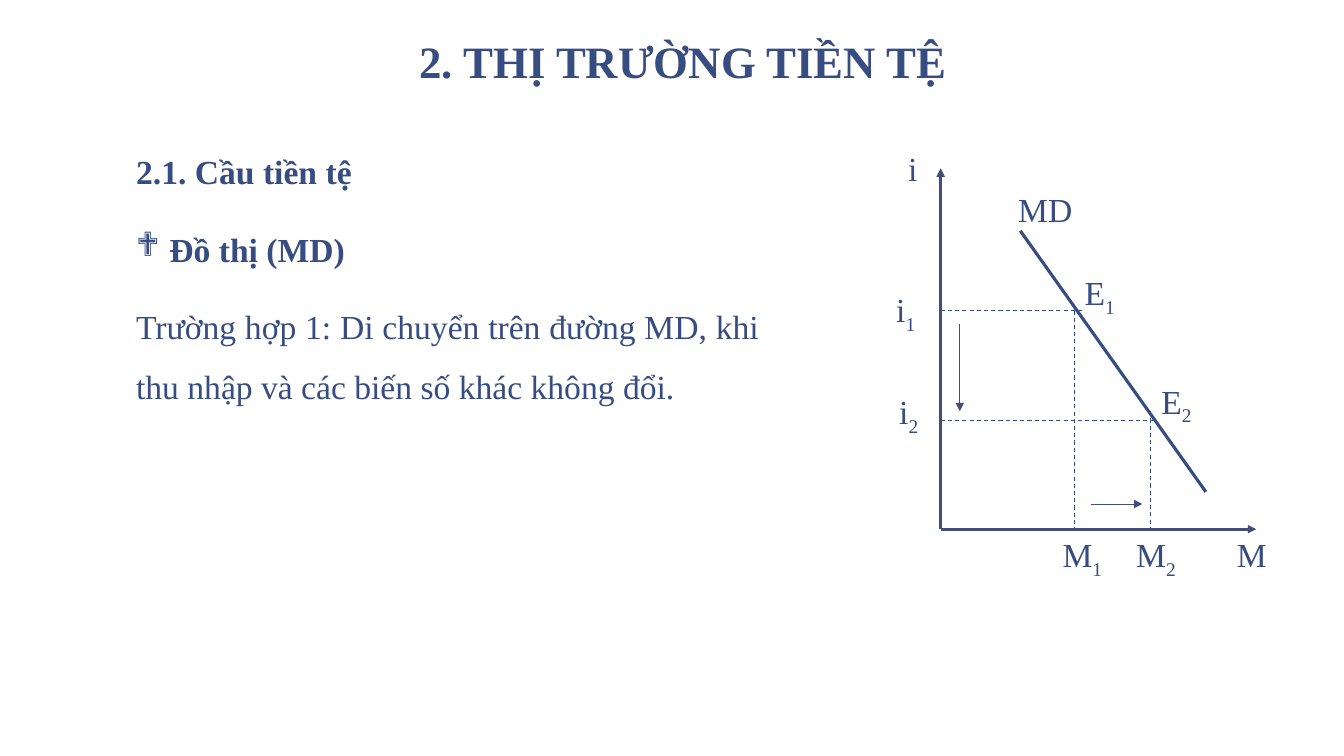
from collections import namedtuple

from lxml.etree import SubElement
from pptx import Presentation
from pptx.dml.color import RGBColor
from pptx.enum.dml import MSO_LINE
from pptx.enum.shapes import MSO_CONNECTOR
from pptx.enum.text import MSO_ANCHOR, MSO_AUTO_SIZE, PP_ALIGN
from pptx.oxml.ns import qn
from pptx.util import Inches, Pt

COLORS = {"text": "374C81", "axis": "414E77", "background": "FFFFFF"}
FONT = "Times New Roman"
Box = namedtuple("Box", "left top width height")


def place(shape, box):
    """Move and size a shape to a box in inches."""
    shape.left, shape.top = Inches(box.left), Inches(box.top)
    shape.width, shape.height = Inches(box.width), Inches(box.height)


def set_insets(frame, side, edge):
    """Set the inner margins of a text frame in inches."""
    frame.margin_left = frame.margin_right = Inches(side)
    frame.margin_top = frame.margin_bottom = Inches(edge)


def add_text(para, text, size=24, bold=False, subscript=False):
    """Add a formatted span of text to a paragraph."""
    span = para.add_run()
    span.text = text
    span.font.name = FONT
    span.font.size = Pt(size)
    span.font.bold = bold
    span.font.color.rgb = RGBColor.from_string(COLORS["text"])
    if subscript:
        span.font._element.set("baseline", "-25000")


def add_bullet(para, symbol, indent):
    """Give a paragraph a hanging bullet."""
    properties = para._p.get_or_add_pPr()
    properties.set("marL", str(Inches(indent)))
    properties.set("indent", str(-Inches(indent)))
    SubElement(properties, qn("a:buFont"), typeface="Wingdings")
    SubElement(properties, qn("a:buChar"), char=symbol)


def add_line(page, start, end, color="text", width=0.75, dashed=False, arrow=False):
    """Draw a straight line between two points in inches."""
    points = [Inches(value) for value in (*start, *end)]
    line = page.shapes.add_connector(MSO_CONNECTOR.STRAIGHT, *points)
    line.line.color.rgb = RGBColor.from_string(COLORS[color])
    line.line.width = Pt(width)
    if dashed:
        line.line.dash_style = MSO_LINE.DASH
    if arrow:
        SubElement(line.line._get_or_add_ln(), qn("a:tailEnd"), type="triangle")
    SubElement(line._element.spPr, qn("a:effectLst"))


def add_title(page, box):
    """Fill the title placeholder."""
    title = page.shapes.title
    place(title, box)
    frame = title.text_frame
    frame.auto_size = MSO_AUTO_SIZE.NONE
    frame.vertical_anchor = MSO_ANCHOR.BOTTOM
    set_insets(frame, 0.13, 0.07)
    para = frame.paragraphs[0]
    para.alignment = PP_ALIGN.CENTER
    para.line_spacing = 0.85
    add_text(para, "2. THỊ TRƯỜNG TIỀN TỆ", size=32, bold=True)


def add_body(page, box):
    """Write the heading, the bullet and the explanation."""
    shape = page.shapes.add_textbox(0, 0, 0, 0)
    place(shape, box)
    frame = shape.text_frame
    frame.word_wrap = True
    set_insets(frame, 0.13, 0.07)
    heading = frame.paragraphs[0]
    bullet, explanation = frame.add_paragraph(), frame.add_paragraph()
    for para in frame.paragraphs:
        para.line_spacing = 1.5
    for para in (bullet, explanation):
        para.space_before = Pt(12)
    add_bullet(bullet, "❖", 0.33)
    explanation.alignment = PP_ALIGN.JUSTIFY
    add_text(heading, "2.1. Cầu tiền tệ", bold=True)
    add_text(bullet, "Đồ thị (MD)", bold=True)
    add_text(explanation, "Trường hợp 1: Di chuyển trên đường MD, "
                          "khi thu nhập và các biến số khác không đổi.")


def add_label(page, box, text, subscript=""):
    """Write a graph label with an optional subscript."""
    shape = page.shapes.add_textbox(0, 0, 0, 0)
    place(shape, box)
    frame = shape.text_frame
    frame.word_wrap = True
    frame.auto_size = MSO_AUTO_SIZE.SHAPE_TO_FIT_TEXT
    para = frame.paragraphs[0]
    add_text(para, text)
    if subscript:
        add_text(para, subscript, subscript=True)


def add_graph(page, box):
    """Draw the money demand graph with its axes filling the box."""
    bottom = box.top + box.height

    def at(across, up):
        return box.left + across, bottom - up

    add_line(page, at(0.79, 2.96), at(2.63, 0.37), width=2.25)

    guides = [((0, 2.17), (1.42, 2.17)), ((1.33, 2.17), (1.33, 0)),
              ((0, 1.08), (2.11, 1.08)), ((2.08, 1.17), (2.08, 0))]
    for start, end in guides:
        add_line(page, at(*start), at(*end), dashed=True)

    labels = [("i", "", -0.42, 3.83, 0.67), ("i", "1", -0.54, 2.43, 0.58),
              ("i", "2", -0.51, 1.42, 0.67), ("MD", "", 0.67, 3.42, 0.92),
              ("E", "1", 1.33, 2.6, 0.58), ("E", "2", 2.09, 1.52, 0.67),
              ("M", "1", 1.11, 0, 0.75), ("M", "2", 1.84, 0, 0.75),
              ("M", "", 2.84, 0, 0.75)]
    for text, subscript, across, up, width in labels:
        add_label(page, Box(*at(across, up), width, 0.5), text, subscript)

    arrows = [((0, 0), (0, box.height), 2), ((0, 0), (box.width, 0), 2),
              ((0.19, 2.04), (0.19, 1.17), 0.5), ((1.49, 0.25), (2, 0.25), 0.5)]
    for start, end, width in arrows:
        add_line(page, at(*start), at(*end), color="axis", width=width, arrow=True)


def main():
    """Build the slide and save the deck."""
    deck = Presentation()
    deck.slide_width, deck.slide_height = Inches(13.33), Inches(7.5)
    page = deck.slides.add_slide(deck.slide_layouts[5])
    page.background.fill.solid()
    page.background.fill.fore_color.rgb = RGBColor.from_string(COLORS["background"])
    add_title(page, Box(1.22, 0.36, 11.11, 0.58))
    add_body(page, Box(1.22, 1.23, 6.44, 6))
    add_graph(page, Box(9.33, 1.67, 3.13, 3.58))
    deck.save("out.pptx")


if __name__ == "__main__":
    main()
